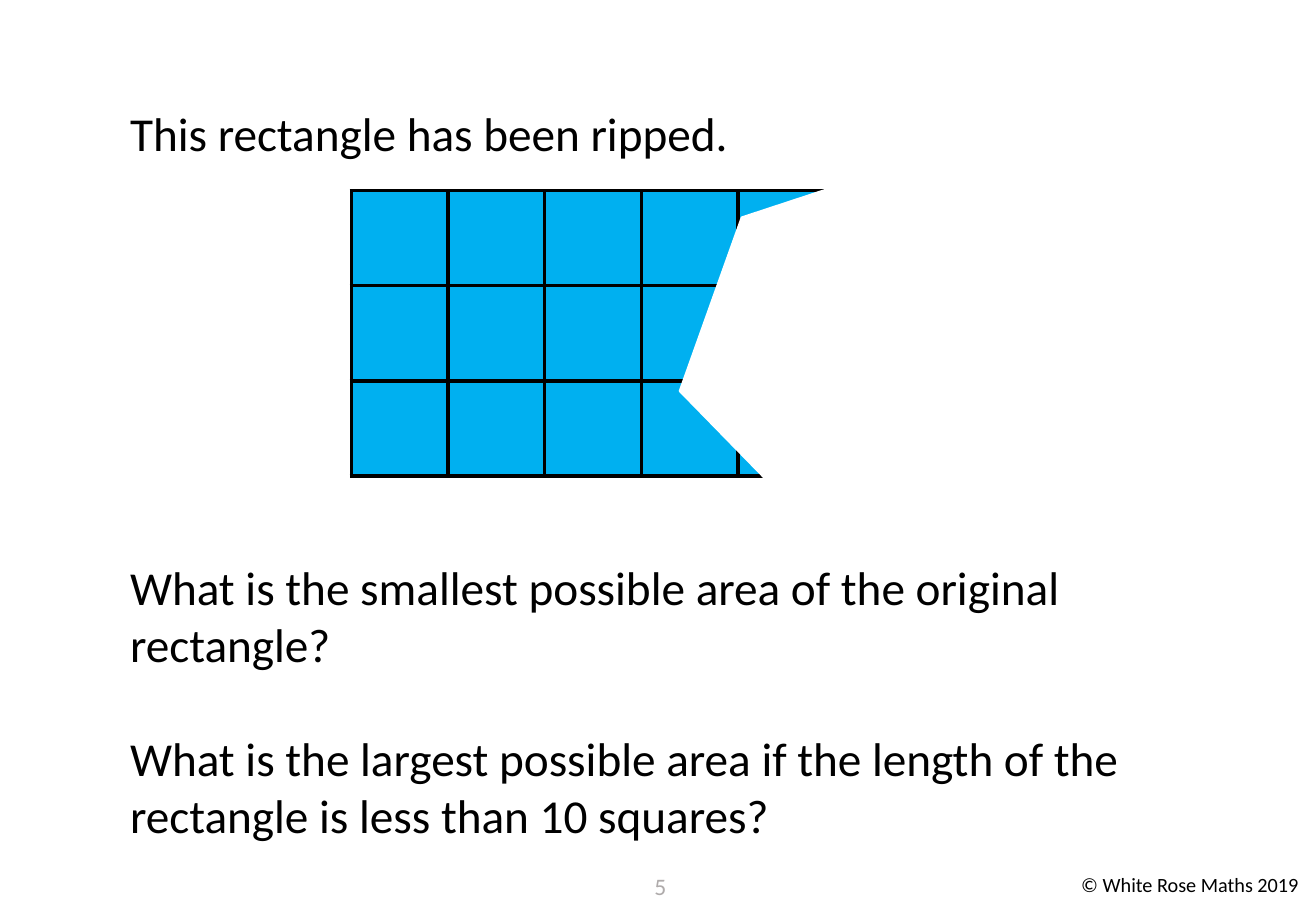
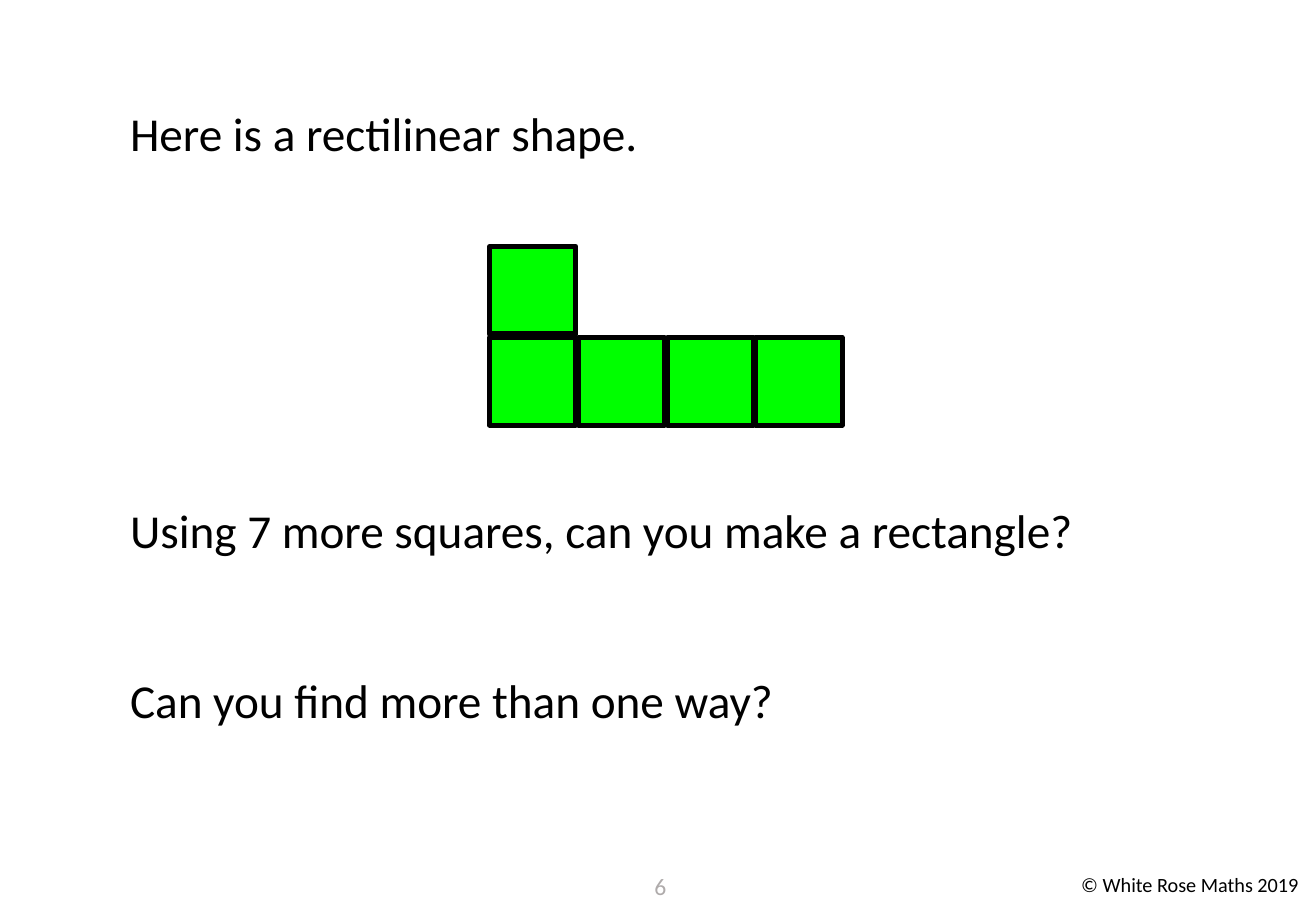
from dataclasses import dataclass
from typing import NamedTuple

import pptx
import pptx.dml.color
import pptx.enum.shapes
import pptx.enum.text
import pptx.oxml
import pptx.oxml.ns
import pptx.util

EMU_PER_PX = 9144  # 100 px to the inch


def px(length: int) -> pptx.util.Emu:
    return pptx.util.Emu(length * EMU_PER_PX)


class Box(NamedTuple):
    left: int
    top: int
    width: int
    height: int

    def emu(self) -> list:
        return [px(length) for length in self]


@dataclass(frozen=True)
class Theme:
    font: str = "Calibri"
    black: str = "000000"
    white: str = "FFFFFF"
    grey: str = "AFABAB"
    blue: str = "00B0F0"
    green: str = "00FF00"
    text_size: int = 28
    number_size: int = 14
    copyright_size: int = 12
    grid_line: float = 2.25
    square_line: int = 3
    tear_line: int = 1


@dataclass(frozen=True)
class Problem:
    number: int
    statement: str
    questions: tuple
    questions_top: int
    question_gap: int  # points between questions


THEME = Theme()
ALIGN = pptx.enum.text.PP_ALIGN
SHAPES = pptx.enum.shapes.MSO_SHAPE

SLIDE_WIDTH, SLIDE_HEIGHT = 1083, 750
TEXT_LEFT, TEXT_WIDTH = 97, 881
STATEMENT = Box(TEXT_LEFT, 81, TEXT_WIDTH, 60)
NUMBER = Box(518, 713, 51, 37)
COPYRIGHT = Box(880, 713, 203, 30)
QUESTIONS_HEIGHT = 245

GRID = Box(289, 157, 398, 235)
GRID_ROWS, GRID_COLUMNS = 3, 5
TEAR = Box(570, 138, 267, 273)
TEAR_ROTATION = 45.7

SQUARE_LEFT, SQUARE_TOP = 403, 203
SQUARE_WIDTH, SQUARE_HEIGHT = 71, 72
COLUMN_PITCH, ROW_PITCH = 73, 75
SQUARE_CELLS = ((1, 0), (1, 1), (1, 2), (1, 3), (0, 0))

RIPPED = Problem(
    5,
    "This rectangle has been ripped.",
    (
        "What is the smallest possible area of the original rectangle?",
        "What is the largest possible area if the length of the rectangle "
        "is less than 10 squares?",
    ),
    455,
    34,
)
RECTILINEAR = Problem(
    6,
    "Here is a rectilinear shape.",
    (
        "Using 7 more squares, can you make a rectangle?",
        "Can you find more than one way?",
    ),
    408,
    67,
)


def rgb(colour: str) -> pptx.dml.color.RGBColor:
    return pptx.dml.color.RGBColor.from_string(colour)


# Text
def write(shape, box: Box, lines: tuple, size: int, colour: str,
          align=ALIGN.LEFT, gap: int = 0) -> None:
    shape.left, shape.top, shape.width, shape.height = box.emu()
    frame = shape.text_frame
    frame.word_wrap = True
    frame.auto_size = pptx.enum.text.MSO_AUTO_SIZE.NONE
    frame.vertical_anchor = pptx.enum.text.MSO_ANCHOR.TOP
    frame.text = "\n".join(lines)
    for index, para in enumerate(frame.paragraphs):
        properties = para._p.get_or_add_pPr()
        properties.set("marL", "0")
        properties.set("indent", "0")
        properties.append(pptx.oxml.parse_xml(
            f'<a:buNone {pptx.oxml.ns.nsdecls("a")}/>'))
        para.alignment = align
        para.line_spacing = 1.0
        para.space_before = pptx.util.Pt(gap if index else 0)
        para.font.name = THEME.font
        para.font.size = pptx.util.Pt(size)
        para.font.bold = False
        para.font.color.rgb = rgb(colour)


def add_page(deck, problem: Problem):
    page = deck.slides.add_slide(deck.slide_layouts[1])
    write(page.shapes.title, STATEMENT, (problem.statement,),
          THEME.text_size, THEME.black)
    questions = Box(TEXT_LEFT, problem.questions_top, TEXT_WIDTH, QUESTIONS_HEIGHT)
    write(page.placeholders[1], questions, problem.questions,
          THEME.text_size, THEME.black, gap=problem.question_gap)

    # Footer
    write(page.shapes.add_textbox(*NUMBER.emu()), NUMBER, (str(problem.number),),
          THEME.number_size, THEME.grey, ALIGN.CENTER)
    notice = page.shapes.add_textbox(*COPYRIGHT.emu())
    write(notice, COPYRIGHT, ("© White Rose Maths 2019",),
          THEME.copyright_size, THEME.black)
    notice.text_frame.margin_right = 0
    return page


# Drawings
def add_shape(page, kind, box: Box, fill: str, line: str, line_width: float):
    shape = page.shapes.add_shape(kind, *box.emu())
    shape.shadow.inherit = False
    shape.fill.solid()
    shape.fill.fore_color.rgb = rgb(fill)
    shape.line.color.rgb = rgb(line)
    shape.line.width = pptx.util.Pt(line_width)
    return shape


def format_cell(cell) -> None:
    properties = cell._tc.get_or_add_tcPr()
    width = pptx.util.Pt(THEME.grid_line)
    for side in ("lnL", "lnR", "lnT", "lnB"):
        properties.append(pptx.oxml.parse_xml(
            f'<a:{side} {pptx.oxml.ns.nsdecls("a")} w="{width}"><a:solidFill>'
            f'<a:srgbClr val="{THEME.black}"/></a:solidFill></a:{side}>'))
    cell.fill.solid()
    cell.fill.fore_color.rgb = rgb(THEME.blue)


def draw_ripped_rectangle(page) -> None:
    table = page.shapes.add_table(GRID_ROWS, GRID_COLUMNS, *GRID.emu()).table
    table.first_row = False
    table.horz_banding = False
    for cell in table.iter_cells():
        format_cell(cell)
    tear = add_shape(page, SHAPES.HEXAGON, TEAR,
                     THEME.white, THEME.white, THEME.tear_line)
    tear.rotation = TEAR_ROTATION


def draw_rectilinear_shape(page) -> None:
    for row, column in SQUARE_CELLS:
        square = Box(SQUARE_LEFT + column * COLUMN_PITCH,
                     SQUARE_TOP + row * ROW_PITCH, SQUARE_WIDTH, SQUARE_HEIGHT)
        add_shape(page, SHAPES.RECTANGLE, square,
                  THEME.green, THEME.black, THEME.square_line)


def main() -> None:
    deck = pptx.Presentation()
    deck.slide_width, deck.slide_height = px(SLIDE_WIDTH), px(SLIDE_HEIGHT)
    draw_ripped_rectangle(add_page(deck, RIPPED))
    draw_rectilinear_shape(add_page(deck, RECTILINEAR))
    deck.save("out.pptx")


if __name__ == "__main__":
    main()
